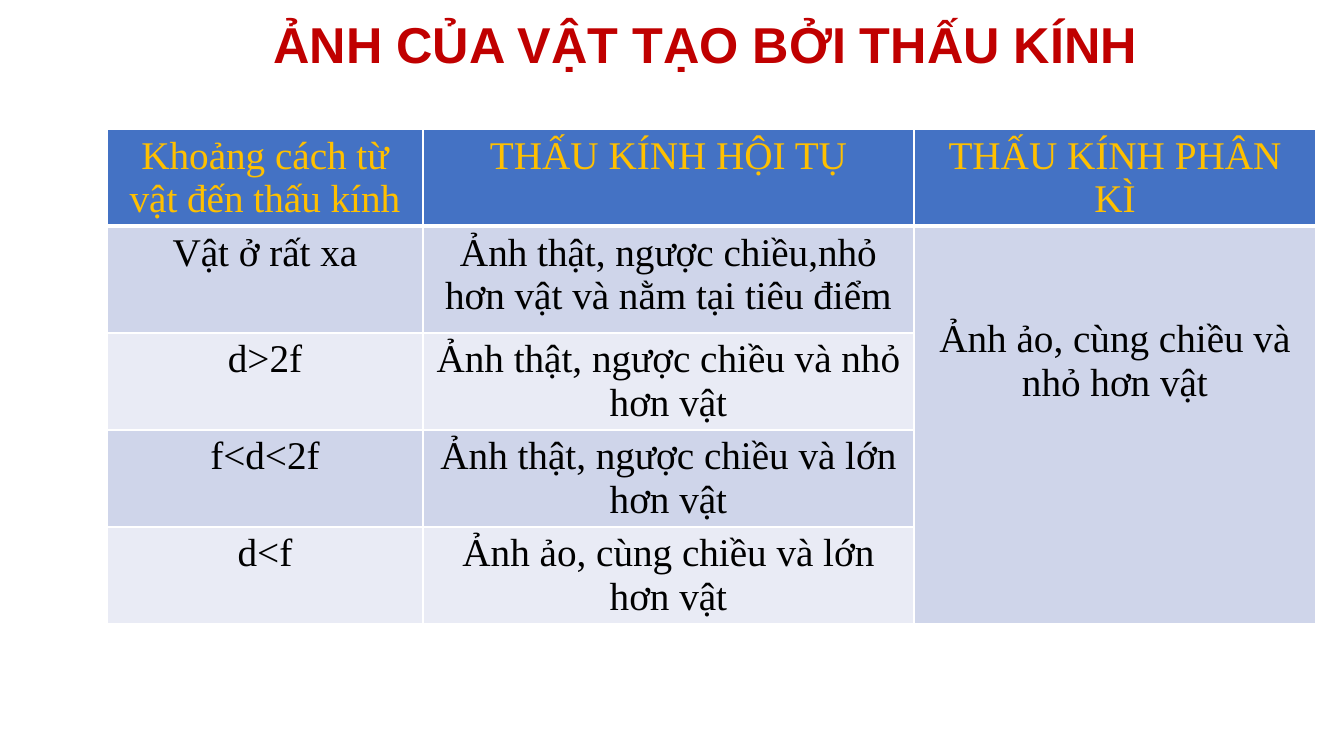
from lxml import etree
from pptx import Presentation
from pptx.dml.color import RGBColor
from pptx.enum.text import MSO_AUTO_SIZE, PP_ALIGN
from pptx.oxml.ns import qn
from pptx.util import Pt

CENTER = PP_ALIGN.CENTER
GROW = MSO_AUTO_SIZE.SHAPE_TO_FIT_TEXT

# Content
TITLE = "ẢNH CỦA VẬT TẠO BỞI THẤU KÍNH"
ROWS = [
    ("Khoảng cách từ vật đến thấu kính", "THẤU KÍNH HỘI TỤ", "THẤU KÍNH PHÂN KÌ"),
    ("Vật ở rất xa", "Ảnh thật, ngược chiều,nhỏ hơn vật và nằm tại tiêu điểm",
     "Ảnh ảo, cùng chiều và nhỏ hơn vật"),
    ("d>2f", "Ảnh thật, ngược chiều và nhỏ hơn vật", ""),
    ("f<d<2f", "Ảnh thật, ngược chiều và lớn hơn vật", ""),
    ("d<f", "Ảnh ảo, cùng chiều và lớn hơn vật", ""),
]

# Colours and text formats
RED = RGBColor(0xC0, 0x00, 0x00)
GOLD = RGBColor(0xFF, 0xC0, 0x00)
BLACK = RGBColor(0x00, 0x00, 0x00)
WHITE = RGBColor(0xFF, 0xFF, 0xFF)
BLUE = RGBColor(0x44, 0x72, 0xC4)
BAND_DARK = RGBColor(0xCF, 0xD5, 0xEA)
BAND_LIGHT = RGBColor(0xE9, 0xEB, 0xF5)
TITLE_FORMAT = {"name": "Arial", "size": Pt(36), "bold": True}
CELL_FORMAT = {"name": "Times New Roman", "size": Pt(28), "bold": False}

# Lengths in px
PX = 914400 / 100.8
SLIDE_SIZE = (1344, 756)
TITLE_BOX = (94, 8, 1223, 72)
TABLE_LEFT, TABLE_TOP = 107, 129
COLUMN_WIDTHS = (316, 491, 402)
ROW_HEIGHTS = (97, 107, 97, 97, 97)
MERGED_TOP_MARGIN = 92


def emu(px):
    return round(px * PX)


def write(frame, text, text_format, color):
    para = frame.paragraphs[0]
    para.alignment = CENTER
    span = para.add_run()
    span.text = text
    for key, value in text_format.items():
        setattr(span.font, key, value)
    span.font.color.rgb = color


def add_borders(cell, widths):
    properties = cell._tc.get_or_add_tcPr()
    for side, width in widths.items():
        line = etree.SubElement(properties, qn(f"a:ln{side}"), w=str(Pt(width)))
        fill = etree.SubElement(line, qn("a:solidFill"))
        etree.SubElement(fill, qn("a:srgbClr"), val=str(WHITE))


deck = Presentation()
deck.slide_width, deck.slide_height = map(emu, SLIDE_SIZE)
page = deck.slides.add_slide(deck.slide_layouts[6])

# Table
table = page.shapes.add_table(
    len(ROWS), len(COLUMN_WIDTHS), emu(TABLE_LEFT), emu(TABLE_TOP),
    emu(sum(COLUMN_WIDTHS)), emu(sum(ROW_HEIGHTS))).table
for column, width in zip(table.columns, COLUMN_WIDTHS):
    column.width = emu(width)
for row, height in zip(table.rows, ROW_HEIGHTS):
    row.height = emu(height)

for r, texts in enumerate(ROWS):
    header = r == 0
    band = BLUE if header else BAND_DARK if r % 2 else BAND_LIGHT
    borders = {"L": 1, "R": 1, "T": 3 if r == 1 else 1, "B": 3 if header else 1}
    for c, text in enumerate(texts):
        cell = table.cell(r, c)
        add_borders(cell, borders)
        cell.fill.solid()
        cell.fill.fore_color.rgb = band
        if text:
            write(cell.text_frame, text, CELL_FORMAT, GOLD if header else BLACK)

# One answer covers every distance for the diverging lens
diverging = table.cell(1, 2)
diverging.merge(table.cell(len(ROWS) - 1, 2))
diverging.margin_top = emu(MERGED_TOP_MARGIN)

# Title
title = page.shapes.add_textbox(*map(emu, TITLE_BOX)).text_frame
title.word_wrap = True
title.auto_size = GROW
write(title, TITLE, TITLE_FORMAT, RED)

deck.save("out.pptx")
